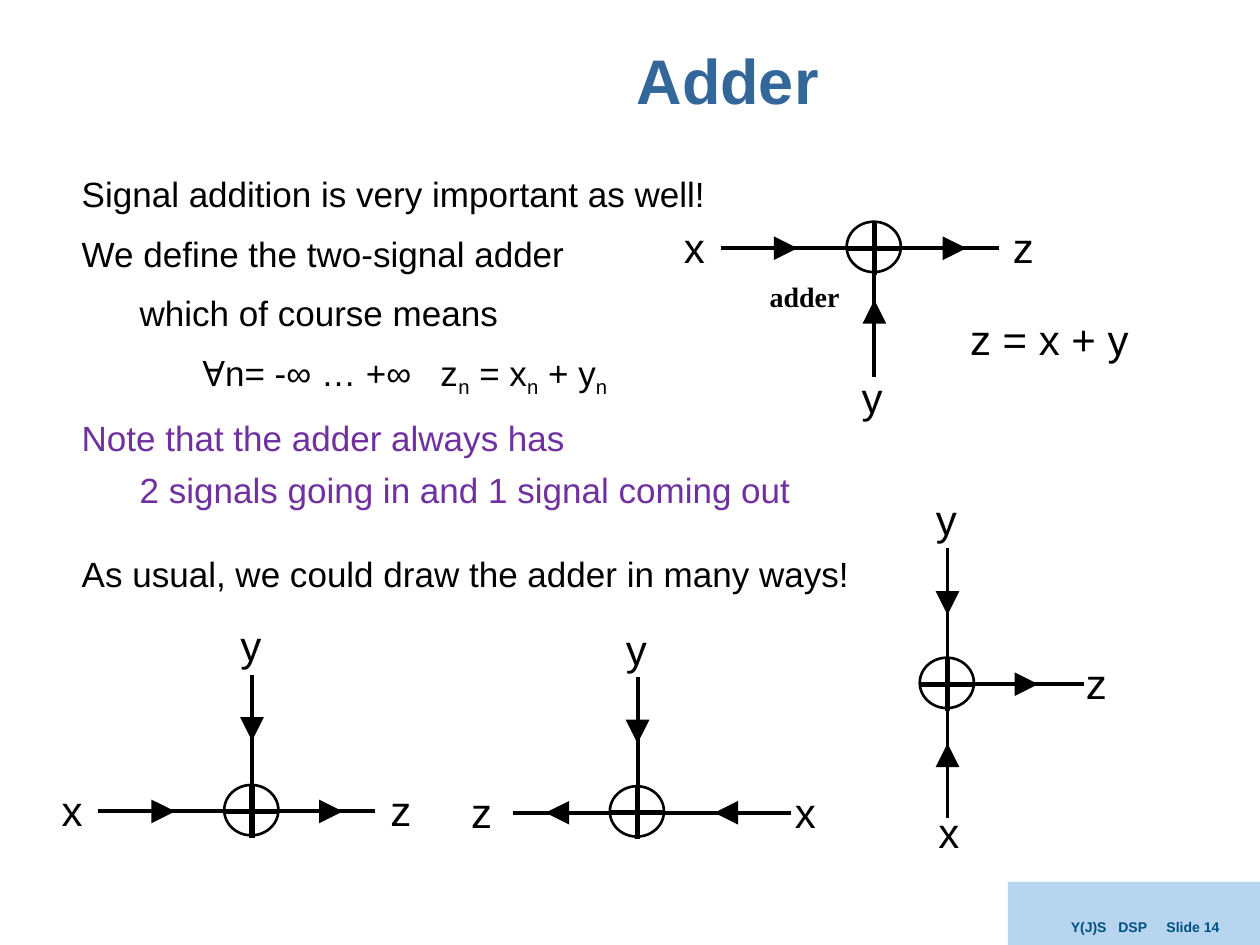
"""Build the slide that explains the two-signal adder."""
from pptx import Presentation
from pptx import util as u
from pptx.dml import color
from pptx.enum import shapes, text
from pptx.oxml import ns
from lxml import etree

Inches, Pt = u.Inches, u.Pt
rgb = color.RGBColor.from_string

prs = Presentation()
prs.slide_width, prs.slide_height = Inches(10), Inches(7.5)
s = prs.slides.add_slide(prs.slide_layouts[6])


def add_text(box, paras, size, hue="000000", bold=False, font="Arial"):
    """Add a text box; each paragraph is (space before, colour, runs)."""
    sp = s.shapes.add_textbox(*[Inches(v) for v in box])
    tf = sp.text_frame
    tf.word_wrap = True
    for i, (before, own_hue, runs) in enumerate(paras):
        p = tf.paragraphs[0] if i == 0 else tf.add_paragraph()
        p.space_before = Pt(before)
        for words, shift in runs:
            r = p.add_run()
            r.text = words
            r.font.size, r.font.bold, r.font.name = Pt(size), bold, font
            r.font.color.rgb = rgb(own_hue or hue)
            if shift:
                r.font._element.set("baseline", str(shift))
    return tf


def add_line(x1, y1, x2, y2, width, arrow=False):
    """Add a straight black line, with an arrowhead at its end if asked."""
    sp = s.shapes.add_connector(shapes.MSO_CONNECTOR.STRAIGHT,
                                Inches(x1), Inches(y1), Inches(x2), Inches(y2))
    sp.line.color.rgb = rgb("000000")
    sp.line.width = Pt(width)
    if arrow:
        etree.SubElement(sp.line._get_or_add_ln(), ns.qn("a:tailEnd"), type="triangle")
    etree.SubElement(sp._element.spPr, ns.qn("a:effectLst"))


fb = s.shapes.build_freeform(10, 7.19, scale=Inches(1))
fb.add_line_segments([(10, 7.5), (8.39, 7.5), (8.39, 7.34), (8.39, 7.3), (8.42, 7.25),
                      (8.46, 7.22), (8.51, 7.2), (8.55, 7.19)], close=True)
sp = fb.convert_to_shape()
sp.shadow.inherit = False
sp.fill.solid()
sp.fill.fore_color.rgb = rgb("B7D5EF")
sp.line.fill.background()
add_text((8.4, 7.24, 1.6, 0.26), [(0, None, [("Y(J)S   DSP     Slide 14", 0)])],
         8, "005081", True)

tf = add_text((2.12, 0.18, 7.31, 0.97), [(0, None, [("Adder", 0)])], 36, "336699", True)
tf.vertical_anchor = text.MSO_ANCHOR.MIDDLE
tf.paragraphs[0].alignment = text.PP_ALIGN.CENTER
tf.paragraphs[0].line_spacing = 0.9

formula = [("\t\tⱯn= -∞ … +∞   z", 0), ("n", -25000), (" = x", 0), ("n", -25000),
           (" + y", 0), ("n", -25000)]
body = [
    (6, None, [("Signal addition is very important as well!", 0)]),
    (10, None, [("We define the two-signal adder", 0)]),
    (10, None, [("\twhich of course means", 0)]),
    (10, None, formula),
    (10, "7030A0", [("Note that the adder always has", 0)]),
    (6, "7030A0", [("\t2 signals going in and 1 signal coming out", 0)]),
    (24, None, [("As usual, we could draw the adder in many ways!", 0)]),
]
tf = add_text((0.55, 1.32, 8.62, 5.99), body, 20)
for p in tf.paragraphs:
    pPr = p._p.get_or_add_pPr()
    pPr.set("marL", str(Inches(0.46)))
    pPr.set("indent", str(-Inches(0.46)))

LEFT, RIGHT, UP, DOWN = (-1, 0), (1, 0), (0, -1), (0, 1)
# name, side, wire length, arrow tip distance, label left, label top
adders = [
    (6.94, 1.97, [("x", LEFT, 1.22, 0.61, 5.33, 1.71),
                  ("z", RIGHT, 0.99, 0.73, 7.94, 1.71),
                  ("y", DOWN, 1.02, 0.41, 6.74, 2.9)]),
    (2, 6.44, [("x", LEFT, 1.22, 0.61, 0.39, 6.18),
               ("z", RIGHT, 0.98, 0.72, 3, 6.18),
               ("y", UP, 1.08, 0.56, 1.81, 4.87)]),
    (5.06, 6.45, [("x", RIGHT, 1.22, 0.61, 6.21, 6.19),
                  ("z", LEFT, 0.99, 0.73, 3.64, 6.19),
                  ("y", UP, 1.08, 0.55, 4.87, 4.9)]),
    (7.52, 5.43, [("x", DOWN, 1.06, 0.47, 7.35, 6.35),
                  ("z", RIGHT, 1.08, 0.72, 8.52, 5.17),
                  ("y", UP, 1.08, 0.55, 7.33, 3.87)]),
]
for cx, cy, signals in adders:
    for name, (dx, dy), length, tip, left, top in signals:
        add_line(cx + dx * length, cy + dy * length, cx, cy, 2.25)
        start = tip - 0.1 if name == "z" else tip + 0.1
        add_line(cx + dx * start, cy + dy * start, cx + dx * tip, cy + dy * tip, 4.5, True)
        add_text((left, top, 0.46, 0.5), [(0, None, [(name, 0)])], 24)
    sp = s.shapes.add_shape(shapes.MSO_SHAPE.OVAL, Inches(cx - 0.22), Inches(cy - 0.21),
                            Inches(0.43), Inches(0.4))
    sp.shadow.inherit = False
    sp.fill.background()
    sp.line.color.rgb = rgb("000000")
    sp.line.width = Pt(1.5)
    add_line(cx, cy - 0.21, cx, cy + 0.21, 3)
    add_line(cx - 0.21, cy, cx + 0.21, cy, 3)

add_text((7.6, 2.44, 1.65, 0.5), [(0, None, [("z = x + y", 0)])], 24)
add_text((6.01, 2.17, 0.82, 0.37), [(0, None, [("adder", 0)])], 16, bold=True,
         font="Times New Roman")

prs.save("out.pptx")
